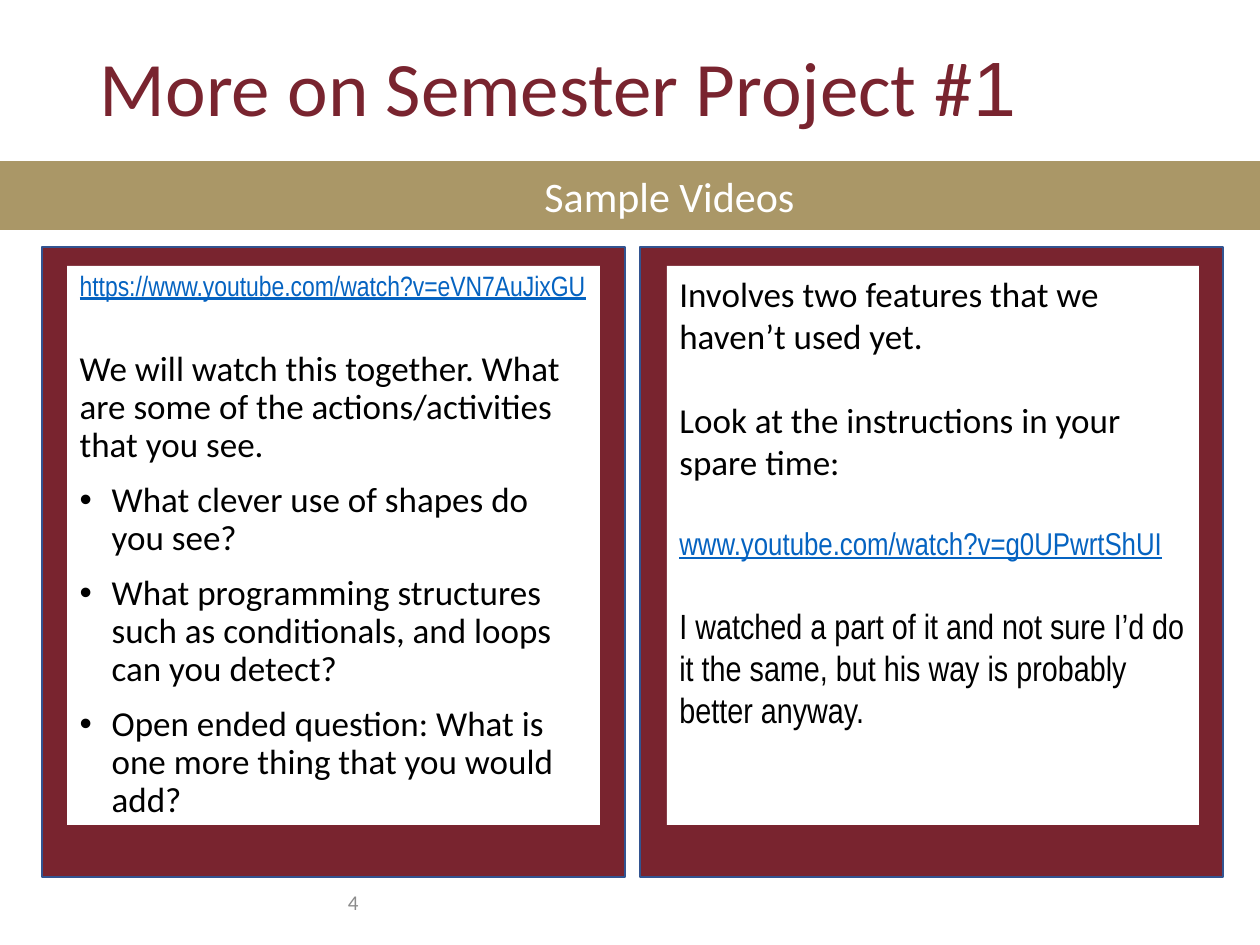
from typing import NamedTuple, Optional

from lxml.etree import SubElement
from pptx import Presentation
from pptx.dml.color import RGBColor
from pptx.enum.shapes import MSO_SHAPE as Shape
from pptx.enum.text import MSO_ANCHOR as Anchor, MSO_AUTO_SIZE as Auto, PP_ALIGN as Align
from pptx.oxml.ns import qn
from pptx.util import Emu, Pt

SCALE = 914400 / 126
MAROON = RGBColor(0x79, 0x24, 0x2F)
NAVY = RGBColor(0x32, 0x54, 0x91)
GOLD = RGBColor(0xAA, 0x97, 0x67)
LINK = RGBColor(0x05, 0x63, 0xC1)
GRAY = RGBColor(0x8C, 0x8C, 0x8C)
BLACK = RGBColor(0, 0, 0)
WHITE = RGBColor(0xFF, 0xFF, 0xFF)
NARROW = "Arial Narrow"


class Box(NamedTuple):
    left: int
    top: int
    width: int
    height: int


class Line(NamedTuple):
    text: str
    size: int = 20
    font: str = "Calibri"
    color: RGBColor = BLACK
    under: bool = False
    before: int = 0
    bullet: bool = False


FRAMES = [Box(left, 247, 583, 630) for left in (42, 640)]
TASKS = [
    Line("https://www.youtube.com/watch?v=eVN7AuJixGU", 16, NARROW, LINK, True),
    Line("We will watch this together. What are some of the actions/activities that you see.", before=28),
    Line("What clever use of shapes do you see?", before=10, bullet=True),
    Line("What programming structures such as conditionals, and loops can you detect?", before=10, bullet=True),
    Line("Open ended question: What is one more thing that you would add?", before=10, bullet=True),
]
NOTES = [
    Line("Involves two features that we haven’t used yet."),
    Line("Look at the instructions in your spare time:", before=24),
    Line("www.youtube.com/watch?v=g0UPwrtShUI", 18, NARROW, LINK, True, before=24),
    Line("I watched a part of it and not sure I’d do it the same, but his way is probably better anyway.",
         font=NARROW, before=24),
]


def px(num: int) -> Emu:
    return Emu(round(num * SCALE))


def place(shape, box: Box) -> None:
    shape.left, shape.top, shape.width, shape.height = map(px, box)


def rect(slide, box: Box, fill: RGBColor, edge: Optional[RGBColor] = None):
    shape = slide.shapes.add_shape(Shape.RECTANGLE, *map(px, box))
    shape.shadow.inherit = False
    shape.fill.solid()
    shape.fill.fore_color.rgb = fill
    if edge is None:
        shape.line.fill.background()
    else:
        shape.line.color.rgb = edge
        shape.line.width = Pt(1)
    return shape


def setup(shape, anchor: Anchor):
    frame = shape.text_frame
    frame.word_wrap = True
    frame.auto_size = Auto.NONE
    frame.vertical_anchor = anchor
    return frame


def write(para, text: str, *, size: int, color: RGBColor, font: str = "Calibri",
          under: bool = False, align: Align = Align.LEFT) -> None:
    para.alignment = align
    run = para.add_run()
    run.text = text
    run.font.name = font
    run.font.size = Pt(size)
    run.font.color.rgb = color
    if under:
        run.font.underline = True


def indent(para, left: int, hang: int = 0, bullet: bool = False) -> None:
    props = para._p.get_or_add_pPr()
    props.set("marL", str(px(left)))
    props.set("indent", str(px(-hang)))
    if bullet:
        SubElement(props, qn("a:buFont"), typeface="Arial")
        SubElement(props, qn("a:buChar"), char="•")
    else:
        SubElement(props, qn("a:buNone"))


def fill(shape, lines: list[Line], space: float = 1.0) -> None:
    frame = setup(shape, Anchor.TOP)
    for num, line in enumerate(lines):
        para = frame.add_paragraph() if num else frame.paragraphs[0]
        hang = 32 if line.bullet else 0
        indent(para, hang, hang, line.bullet)
        para.line_spacing = space
        para.space_before = Pt(line.before)
        write(para, line.text, size=line.size, color=line.color, font=line.font, under=line.under)


def main() -> None:
    """Build the sample videos slide."""
    deck = Presentation()
    deck.slide_width, deck.slide_height = px(1260), px(945)
    slide = deck.slides.add_slide(deck.slide_layouts[1])
    title, body = slide.placeholders

    for box in FRAMES:
        title.element.addprevious(rect(slide, box, MAROON, NAVY).element)

    place(title, Box(87, 24, 1086, 136))
    head = setup(title, Anchor.MIDDLE).paragraphs[0]
    head.line_spacing = 0.9
    write(head, "More on Semester Project #", size=44, color=MAROON)
    write(head, "1", size=44, color=MAROON, font="Arial")

    place(body, Box(67, 266, 533, 559))
    body.fill.solid()
    body.fill.fore_color.rgb = WHITE
    fill(body, TASKS, 0.9)

    page = slide.shapes.add_textbox(*map(px, Box(87, 877, 284, 50)))
    write(setup(page, Anchor.MIDDLE).paragraphs[0], "4", size=12, color=GRAY, align=Align.RIGHT)

    fill(rect(slide, Box(667, 266, 532, 559), WHITE), NOTES)

    bar = rect(slide, Box(0, 161, 1260, 69), GOLD)
    label = setup(bar, Anchor.MIDDLE).paragraphs[0]
    indent(label, 79)
    write(label, "Sample Videos", size=24, color=WHITE, align=Align.CENTER)

    deck.save("out.pptx")


if __name__ == "__main__":
    main()
